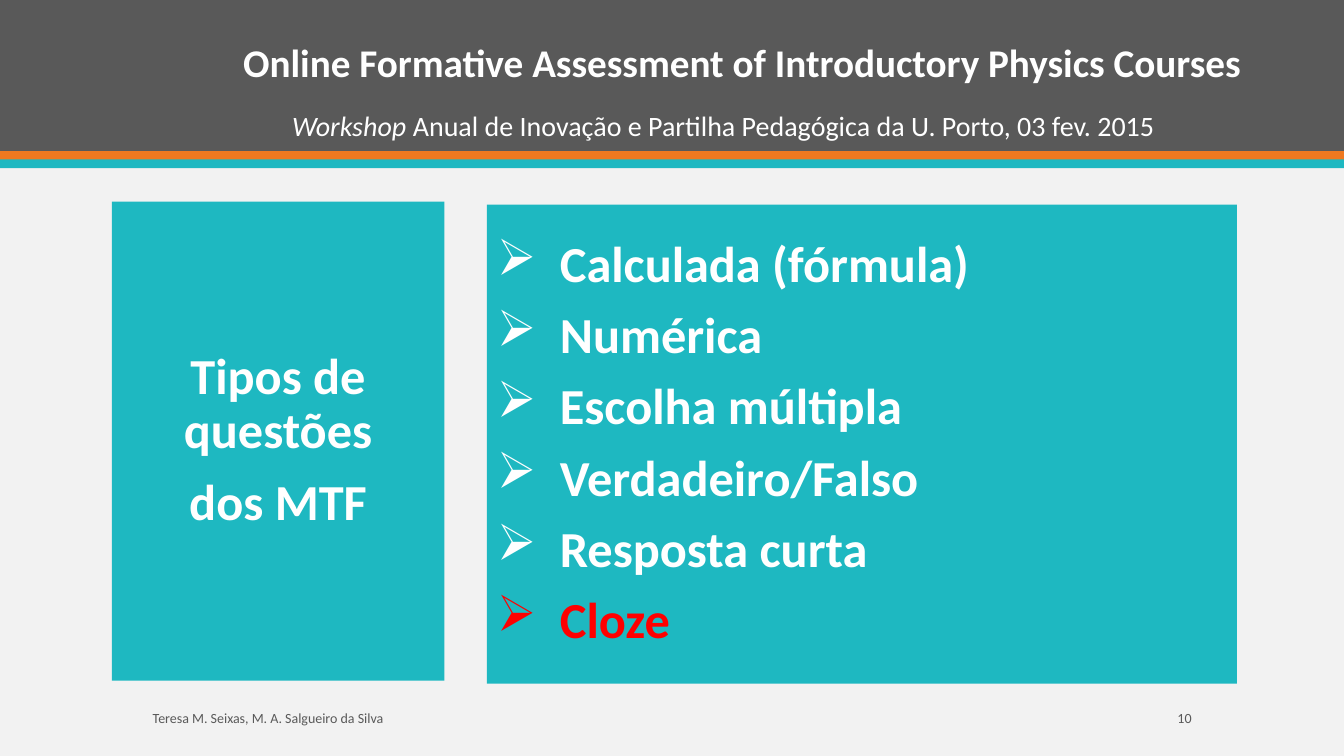
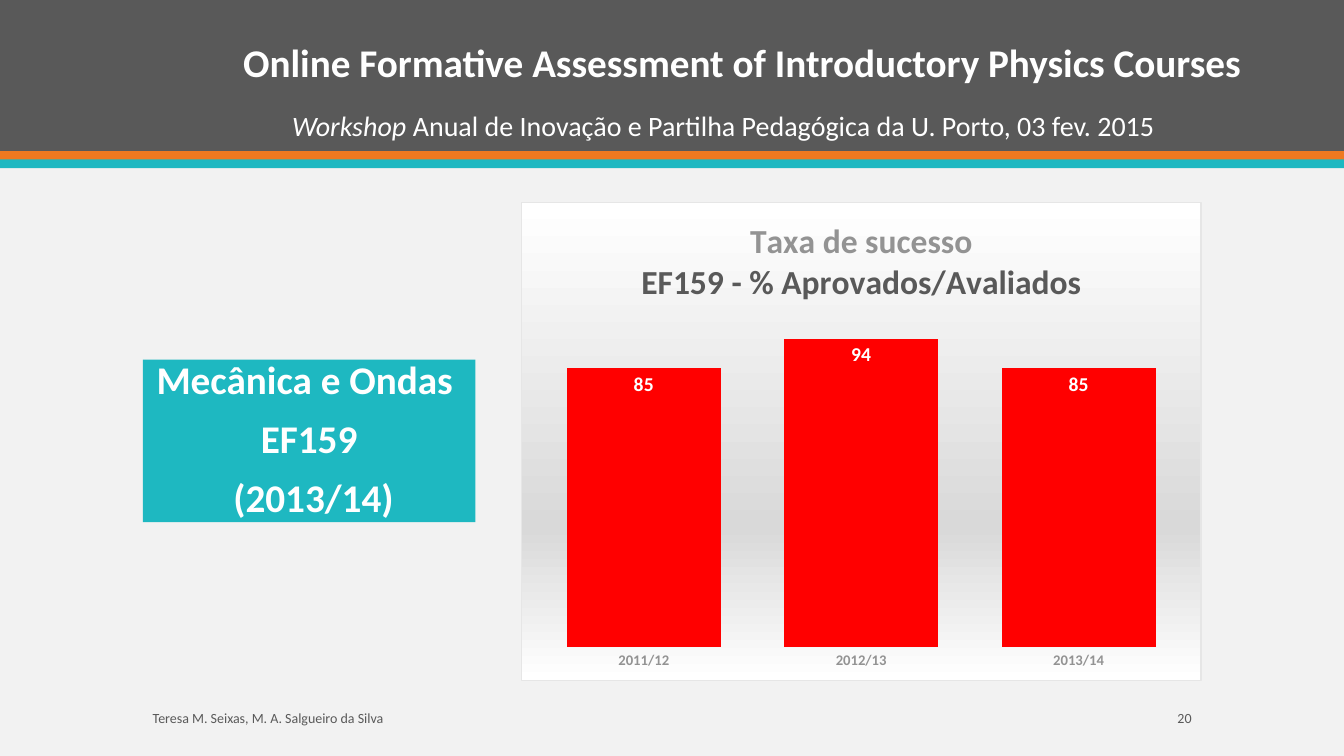
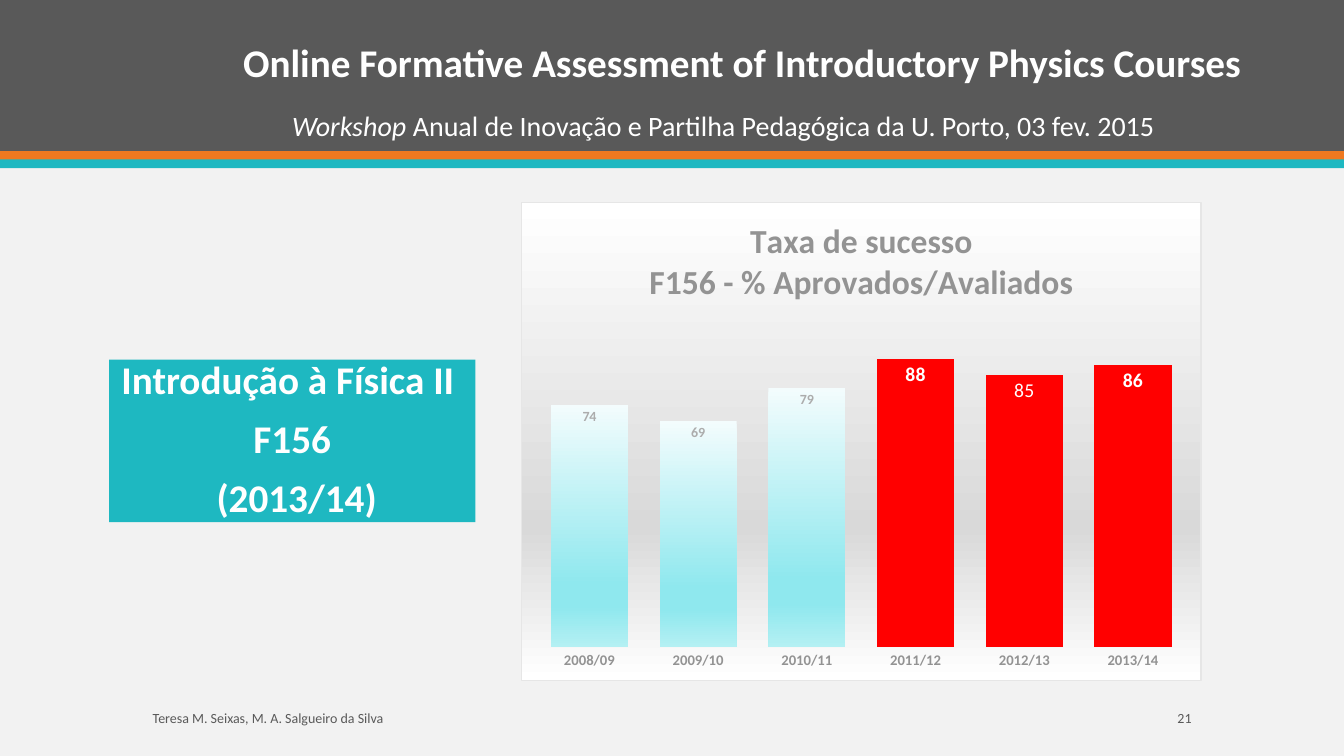
from dataclasses import dataclass

import pptx
import pptx.chart.data
import pptx.dml.color
import pptx.enum.chart
import pptx.enum.shapes
import pptx.enum.text
import pptx.oxml
import pptx.oxml.ns
import pptx.util

Cm = pptx.util.Cm
Pt = pptx.util.Pt
qn = pptx.oxml.ns.qn
ALIGN = pptx.enum.text.PP_ALIGN
ANCHOR = pptx.enum.text.MSO_ANCHOR


@dataclass(frozen=True)
class Theme:
    font: str = "Calibri"
    page: str = "F2F2F2"
    header: str = "595959"
    orange: str = "EF7920"
    teal: str = "1EB8C1"
    white: str = "FFFFFF"
    red: str = "FF0000"
    muted: str = "939393"
    pale: str = "ACACAC"
    chart_border: str = "E6E6E6"
    chart_stops: tuple = ((0, "FFFFFF"), (68, "D9D9D9"), (100, "FFFFFF"))
    early_stops: tuple = ((0, "F3FCFD"), (74, "8FE8EE"), (83, "8FE8EE"), (100, "B4F0F3"))
    panel_size: float = 36
    title_size: float = 28
    chart_title_size: float = 24
    event_size: float = 20
    highlight_size: float = 14
    axis_size: float = 10.5
    small_size: float = 10


def set_values(target, values):
    for name, value in values.items():
        setattr(target, name, value)


def rgb(color):
    return pptx.dml.color.RGBColor.from_string(color)


def gradient_xml(stops):
    """Return the markup of a gradient that runs from top to bottom."""
    marks = "".join(
        f'<a:gs pos="{percent * 1000}"><a:srgbClr val="{color}"/></a:gs>'
        for percent, color in stops)
    return (f'<a:gradFill {pptx.oxml.ns.nsdecls("a")} rotWithShape="1">'
            f'<a:gsLst>{marks}</a:gsLst><a:lin ang="5400000" scaled="0"/></a:gradFill>')


class Deck:
    TITLE = "Online Formative Assessment of Introductory Physics Courses "
    EVENT = (("Workshop", True),
             (" Anual de Inovação e Partilha Pedagógica da U. Porto, 03 fev. 2015", False))
    AUTHORS = "Teresa M. Seixas, M. A. Salgueiro da Silva"

    def __init__(self, theme):
        self.theme = theme
        self.prs = pptx.Presentation()
        set_values(self.prs, {"slide_width": Cm(33.87), "slide_height": Cm(19.05)})
        background = self.prs.slide_master.background.fill
        background.solid()
        background.fore_color.rgb = rgb(theme.page)
        self.slide = None

    def style(self, font, size, color, bold=False, italic=False):
        set_values(font, {"name": self.theme.font, "size": Pt(size),
                          "bold": bold, "italic": italic})
        font.color.rgb = rgb(color)

    def new_slide(self, number):
        theme = self.theme
        self.slide = self.prs.slides.add_slide(self.prs.slide_layouts[6])
        self.rectangle((0, 0, 33.87, 3.81), theme.header)
        self.rectangle((0, 3.81, 33.87, 0.22), theme.orange)
        self.rectangle((0, 4.02, 33.87, 0.22), theme.teal)
        event = self.text((7.11, 2.62, 23.27, 1.12), ANCHOR.TOP)
        for words, italic in self.EVENT:
            run = event.add_run()
            run.text = words
            self.style(run.font, theme.event_size, theme.white, italic=italic)
        title = self.text((3.76, 0.33, 30.1, 1.96), ANCHOR.BOTTOM, self.TITLE)
        set_values(title, {"alignment": ALIGN.CENTER, "line_spacing": 0.9})
        self.style(title.font, theme.title_size, theme.white, bold=True)
        authors = self.text((3.6, 17.7, 16.2, 0.76), ANCHOR.MIDDLE, self.AUTHORS)
        page = self.text((26.47, 17.7, 3.81, 0.76), ANCHOR.MIDDLE, str(number))
        page.alignment = ALIGN.RIGHT
        for footer in (authors, page):
            self.style(footer.font, theme.small_size, theme.header)

    def rectangle(self, box, color):
        shape = self.slide.shapes.add_shape(
            pptx.enum.shapes.MSO_SHAPE.RECTANGLE, *map(Cm, box))
        shape.shadow.inherit = False
        shape.fill.solid()
        shape.fill.fore_color.rgb = rgb(color)
        shape.line.fill.background()
        return shape

    def text(self, box, anchor, words=""):
        """Add a text box and return its paragraph."""
        frame = self.slide.shapes.add_textbox(*map(Cm, box)).text_frame
        set_values(frame, {"word_wrap": True, "vertical_anchor": anchor})
        paragraph = frame.paragraphs[0]
        if words:
            paragraph.text = words
        return paragraph

    def panel(self, box, lines, size, bullet=None, red_line=None):
        frame = self.rectangle(box, self.theme.teal).text_frame
        set_values(frame, {"word_wrap": True, "vertical_anchor": ANCHOR.MIDDLE,
                           "margin_top": 0, "margin_bottom": 0})
        for index, line in enumerate(lines):
            paragraph = frame.add_paragraph() if index else frame.paragraphs[0]
            paragraph.text = line
            set_values(paragraph, {"alignment": ALIGN.LEFT if bullet else ALIGN.CENTER,
                                   "line_spacing": 0.9,
                                   "space_before": Pt(12 if index else 0)})
            if bullet:
                self.add_bullet(paragraph, bullet)
            color = self.theme.red if line == red_line else self.theme.white
            self.style(paragraph.runs[0].font, size, color, bold=True)

    def add_bullet(self, paragraph, bullet):
        properties = paragraph._p.get_or_add_pPr()
        indent = Cm(1.59)
        properties.set("marL", str(indent))
        properties.set("indent", str(-indent))
        mark = pptx.oxml.parse_xml(f'<a:buChar {pptx.oxml.ns.nsdecls("a")} char="{bullet}"/>')
        properties.append(mark)

    def success_chart(self, rates, title_lines, highlights, replaced_labels=None):
        """Draw success rates by year; highlighted years are red, the rest pale."""
        theme = self.theme
        data = pptx.chart.data.CategoryChartData()
        data.categories = list(rates)
        data.add_series("Series 1", list(rates.values()))
        chart = self.slide.shapes.add_chart(
            pptx.enum.chart.XL_CHART_TYPE.COLUMN_CLUSTERED,
            *map(Cm, (13.13, 5.08, 17.15, 12.07)), data).chart
        chart.has_legend = False
        self.style(chart.font, theme.small_size, theme.header)
        self.chart_title(chart, title_lines)
        self.chart_axes(chart)
        set_values(chart.plots[0], {"gap_width": 41, "vary_by_categories": False})
        self.chart_columns(chart, rates, highlights, replaced_labels or {})
        self.chart_area(chart)

    def chart_title(self, chart, title_lines):
        chart.has_title = True
        frame = chart.chart_title.text_frame
        for index, (line, color) in enumerate(title_lines):
            paragraph = frame.add_paragraph() if index else frame.paragraphs[0]
            run = paragraph.add_run()
            run.text = line
            self.style(run.font, self.theme.chart_title_size, color, bold=True)

    def chart_axes(self, chart):
        no_tick = pptx.enum.chart.XL_TICK_MARK.NONE
        set_values(chart.value_axis, {"visible": False, "has_major_gridlines": False,
                                      "minimum_scale": 0, "maximum_scale": 100,
                                      "major_unit": 20})
        years = chart.category_axis
        set_values(years, {"major_tick_mark": no_tick, "minor_tick_mark": no_tick,
                           "has_major_gridlines": False})
        years.format.line.fill.background()
        self.style(years.tick_labels.font, self.theme.axis_size, self.theme.muted, bold=True)

    def chart_columns(self, chart, rates, highlights, replaced_labels):
        theme = self.theme
        inside = pptx.enum.chart.XL_LABEL_POSITION.INSIDE_END
        series = chart.plots[0].series[0]
        series.format.fill.solid()
        series.format.fill.fore_color.rgb = rgb(theme.teal)
        set_values(series.data_labels, {"show_value": True, "position": inside})
        self.style(series.data_labels.font, theme.small_size, theme.pale, bold=True)
        for index, year in enumerate(rates):
            point = series.points[index]
            if year not in highlights:
                point.format.fill.gradient()
                continue
            point.format.fill.solid()
            point.format.fill.fore_color.rgb = rgb(theme.red)
            label = point.data_label
            if year in replaced_labels:
                run = label.text_frame.paragraphs[0].add_run()
                run.text = replaced_labels[year]
                self.style(run.font, theme.highlight_size, theme.white)
            else:
                self.style(label.font, theme.highlight_size, theme.white, bold=True)
            label.position = inside
        for fill in list(chart.element.iter(qn("a:gradFill"))):
            early = pptx.oxml.parse_xml(gradient_xml(theme.early_stops))
            fill.getparent().replace(fill, early)

    def chart_area(self, chart):
        """Fill and frame the chart, and fix the place of its title and columns."""
        namespaces = pptx.oxml.ns.nsdecls("c", "a")
        area = pptx.oxml.parse_xml(
            f'<c:spPr {namespaces}>{gradient_xml(self.theme.chart_stops)}'
            f'<a:ln w="{Pt(0.75)}"><a:solidFill><a:srgbClr val="{self.theme.chart_border}"/>'
            '</a:solidFill></a:ln></c:spPr>')
        chart.element.find(qn("c:chart")).addnext(area)
        plot_area = next(chart.element.iter(qn("c:plotArea")))
        for layout in plot_area.findall(qn("c:layout")):
            plot_area.remove(layout)
        place = {"x": 0.02, "y": 0.245, "w": 0.96, "h": 0.687}
        sides = "".join(f'<c:{side} val="{share}"/>' for side, share in place.items())
        plot_area.insert(0, pptx.oxml.parse_xml(
            f'<c:layout {namespaces}><c:manualLayout><c:layoutTarget val="inner"/>'
            f'<c:xMode val="edge"/><c:yMode val="edge"/>{sides}</c:manualLayout></c:layout>'))


def main():
    theme = Theme()
    deck = Deck(theme)

    deck.new_slide(10)
    deck.panel((2.82, 5.08, 8.38, 12.07), ("Tipos de questões", "dos MTF"), theme.panel_size)
    question_types = ("Calculada (fórmula)", "Numérica", "Escolha múltipla",
                      "Verdadeiro/Falso", "Resposta curta", "Cloze")
    deck.panel((12.27, 5.16, 18.9, 12.07), question_types, theme.panel_size,
               bullet="➢", red_line="Cloze")

    deck.new_slide(20)
    mechanics = {"2011/12": 85, "2012/13": 94, "2013/14": 85}
    deck.success_chart(mechanics,
                       (("Taxa de sucesso", theme.muted),
                        ("EF159 - % Aprovados/Avaliados", theme.header)),
                       highlights=mechanics)
    deck.panel((3.6, 9.06, 8.38, 4.1), ("Mecânica e Ondas ", "EF159", " (2013/14)"),
               theme.title_size)

    deck.new_slide(21)
    physics = {"2008/09": 74, "2009/10": 69, "2010/11": 79,
               "2011/12": 88, "2012/13": 83, "2013/14": 86}
    deck.success_chart(physics,
                       (("Taxa de sucesso", theme.muted),
                        ("F156 - % Aprovados/Avaliados", theme.muted)),
                       highlights=("2011/12", "2012/13", "2013/14"),
                       replaced_labels={"2012/13": "85"})
    deck.panel((2.75, 9.06, 9.23, 4.1), ("Introdução à Física II ", "F156", " (2013/14)"),
               theme.title_size)

    deck.prs.save("out.pptx")


if __name__ == "__main__":
    main()
